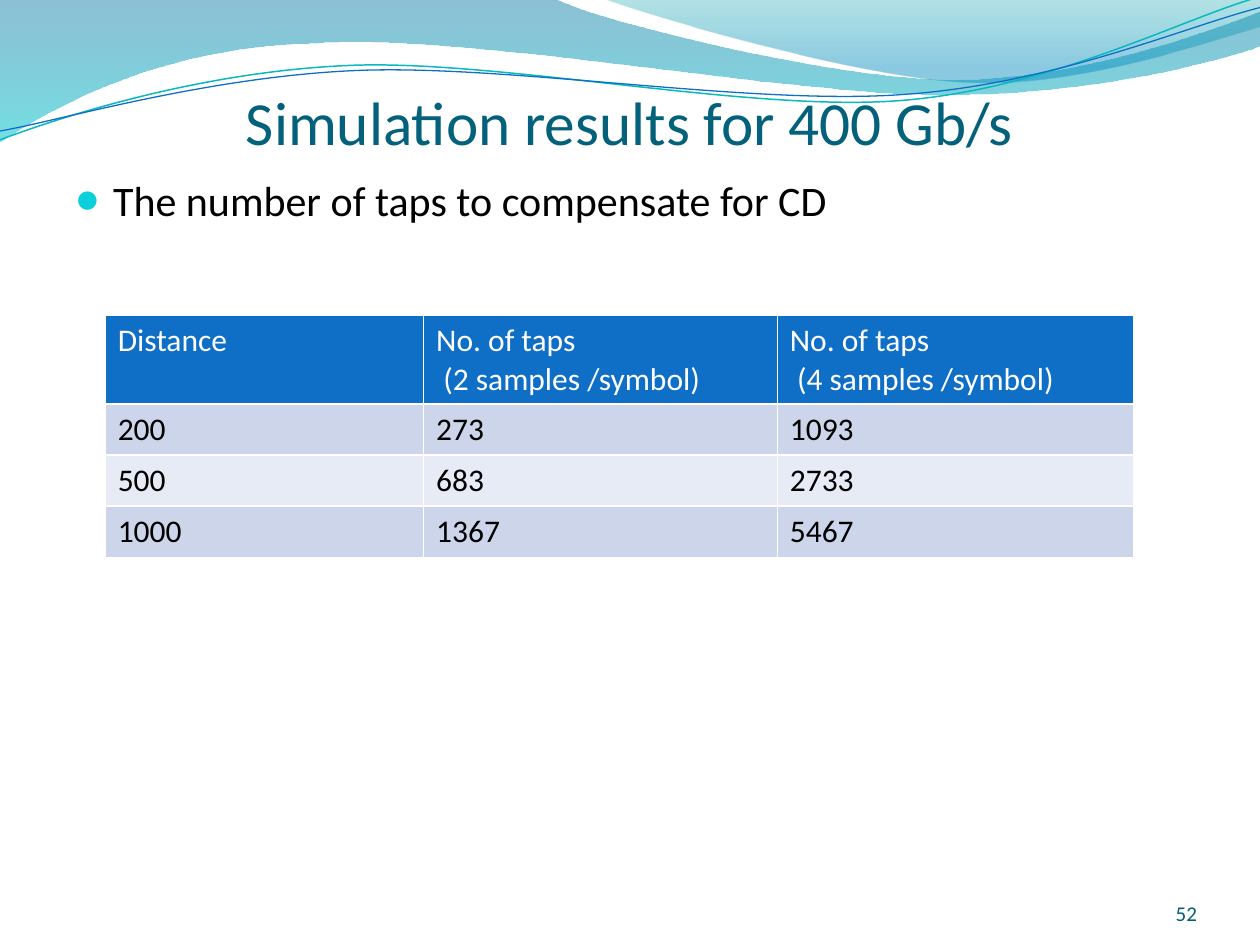
from lxml import etree
from pptx import Presentation
from pptx.dml.color import RGBColor
from pptx.enum.text import MSO_ANCHOR, PP_ALIGN
from pptx.oxml.ns import qn
from pptx.util import Cm, Pt

LEFT, CENTER, RIGHT = PP_ALIGN.LEFT, PP_ALIGN.CENTER, PP_ALIGN.RIGHT
TOP, BOTTOM = MSO_ANCHOR.TOP, MSO_ANCHOR.BOTTOM

WHITE = RGBColor(0xFF, 0xFF, 0xFF)
BLACK = RGBColor(0x00, 0x00, 0x00)
TITLE = RGBColor(0x04, 0x61, 0x7B)
NUMBER = RGBColor(0x04, 0x5D, 0x75)
BULLET = RGBColor(0x0B, 0xD0, 0xD9)
BLUE = RGBColor(0x0F, 0x6F, 0xC6)
TEAL = RGBColor(0x0A, 0xB8, 0xBF)
BAND = RGBColor(0xCC, 0xD5, 0xEA)
PALE = RGBColor(0xE7, 0xEB, 0xF5)
DEEP = RGBColor(0x00, 0x74, 0xA1)
AQUA = RGBColor(0x00, 0xC6, 0xCF)
SEA = RGBColor(0x00, 0xA1, 0xA9)
SKY = RGBColor(0x00, 0x8B, 0xBF)

INCH = Cm(2.54)

WAVES = [
    ([(0, 0), (4.4, -0.01), (4.76, 0.17, 6.64, 0.63, 7.58, 0.63),
      (8.53, 0.63, 9.58, 0.26, 10, 0.09), (10.01, 0.36),
      (9.83, 0.44, 8.7, 0.76, 7.46, 0.75), (6.22, 0.75, 3.82, 0.28, 2.57, 0.34),
      (1.29, 0.36, 0.46, 0.83, -0.01, 1.13)],
     [(0, DEEP, 45), (1, AQUA, 55)]),
    ([(4.79, -0.01), (5.09, 0.11, 6.82, 0.62, 7.69, 0.65),
      (8.56, 0.69, 9.61, 0.32, 10, 0.21), (10, 0)],
     [(0, SEA, 30), (0.8, SKY, 45)]),
]
CURVES = [
    ([(0, 1.11), (0.48, 0.93, 1.58, 0.57, 2.77, 0.52),
      (3.95, 0.47, 5.93, 0.89, 7.13, 0.8), (8.33, 0.71, 9.38, 0.15, 9.98, -0.02)],
     TEAL, 0.85),
    ([(0, 1.04), (0.47, 0.96, 1.64, 0.61, 2.83, 0.56),
      (4.03, 0.51, 5.97, 0.84, 7.17, 0.75), (8.36, 0.67, 9.41, 0.21, 10, 0.06)],
     BLUE, 0.75),
]
ROWS = [
    ["Distance", "No. of taps\n (2 samples /symbol)", "No. of taps\n (4 samples /symbol)"],
    ["200", "273", "1093"],
    ["500", "683", "2733"],
    ["1000", "1367", "5467"],
]


def bend(shape, node, part):
    node.tag = qn("a:cubicBezTo")
    for child in list(node):
        node.remove(child)
    for x, y in zip(part[::2], part[1::2]):
        etree.SubElement(node, qn("a:pt"), x=str(round(x * INCH) - shape.left),
                         y=str(round(y * INCH) - shape.top))


def outline(slide, path, close):
    ends = [(part[-2] * INCH, part[-1] * INCH) for part in path]
    form = slide.shapes.build_freeform(*ends[0])
    form.add_line_segments(ends[1:], close=close)
    shape = form.convert_to_shape()
    shape.shadow.inherit = False
    nodes = list(shape._element.iter(qn("a:lnTo")))
    for node, part in zip(nodes, path[1:]):
        if len(part) == 6:
            swap = etree.SubElement(node.getparent(), qn("a:cubicBezTo"))
            node.getparent().replace(node, swap)
            bend(shape, swap, part)
    return shape


def add_wave(slide, path, stops):
    shape = outline(slide, path, True)
    shape.line.fill.background()
    fill = shape.fill
    fill.gradient()
    fill.gradient_angle = 270
    for stop, (pos, color, _) in zip(fill.gradient_stops, stops):
        stop.position = pos
        stop.color.rgb = color
    for node, (_, _, alpha) in zip(shape._element.iter(qn("a:srgbClr")), stops):
        etree.SubElement(node, qn("a:alpha"), val=str(alpha * 1000))


def add_curve(slide, path, color, width):
    shape = outline(slide, path, False)
    shape.fill.background()
    shape.line.color.rgb = color
    shape.line.width = Pt(width)


def write(frame, text, size=18, color=BLACK, align=LEFT):
    frame.word_wrap = True
    for i, words in enumerate(text.split("\n")):
        para = frame.add_paragraph() if i else frame.paragraphs[0]
        para.alignment = align
        run = para.add_run()
        run.text = words
        run.font.name = "Calibri"
        run.font.size = Pt(size)
        run.font.color.rgb = color


def add_text(slide, box, text, anchor=TOP, inset=(0.25, 0.13), **style):
    frame = slide.shapes.add_textbox(*map(Cm, box)).text_frame
    frame.margin_left = frame.margin_right = Cm(inset[0])
    frame.margin_top = frame.margin_bottom = Cm(inset[1])
    frame.vertical_anchor = anchor
    write(frame, text, **style)
    return frame


def add_bullet(para):
    props = para._p.get_or_add_pPr()
    props.set("marL", str(Cm(0.76)))
    props.set("indent", str(-Cm(0.76)))
    color = etree.SubElement(props, qn("a:buClr"))
    etree.SubElement(color, qn("a:srgbClr"), val=str(BULLET))
    etree.SubElement(props, qn("a:buSzPct"), val="95000")
    etree.SubElement(props, qn("a:buFont"), typeface="Calibri")
    etree.SubElement(props, qn("a:buChar"), char="●")


def add_border(cell):
    props = cell._tc.get_or_add_tcPr()
    for side in ("lnL", "lnR", "lnT", "lnB"):
        line = etree.SubElement(props, qn("a:" + side), w=str(Pt(1)))
        fill = etree.SubElement(line, qn("a:solidFill"))
        etree.SubElement(fill, qn("a:srgbClr"), val=str(WHITE))


def add_grid(slide, rows):
    widths, heights = (6.42, 7.13, 7.18), (1.78, 1.03, 1.03, 1.04)
    table = slide.shapes.add_table(
        len(rows), len(widths), Cm(2.12), Cm(6.36),
        Cm(sum(widths)), Cm(sum(heights))).table
    for col, width in zip(table.columns, widths):
        col.width = Cm(width)
    for r, (row, height) in enumerate(zip(rows, heights)):
        table.rows[r].height = Cm(height)
        fill = BLUE if r == 0 else BAND if r % 2 else PALE
        for c, text in enumerate(row):
            cell = table.cell(r, c)
            add_border(cell)
            cell.fill.solid()
            cell.fill.fore_color.rgb = fill
            write(cell.text_frame, text, color=BLACK if r else WHITE)


def main():
    deck = Presentation()
    deck.slide_width, deck.slide_height = Cm(25.4), Cm(19.05)
    slide = deck.slides.add_slide(deck.slide_layouts[6])
    for wave in WAVES:
        add_wave(slide, *wave)
    for curve in CURVES:
        add_curve(slide, *curve)
    add_text(slide, (1.27, 0, 22.86, 3.18), "Simulation results for 400 Gb/s",
             anchor=BOTTOM, inset=(0, 0), size=35, color=TITLE, align=CENTER)
    body = add_text(slide, (1.27, 3.38, 22.86, 12.19),
                    "The number of taps to compensate for CD", size=24)
    add_bullet(body.paragraphs[0])
    add_grid(slide, ROWS)
    add_text(slide, (22.02, 17.65, 2.11, 1.02), "52",
             anchor=BOTTOM, inset=(0, 0), size=12, color=NUMBER, align=RIGHT)
    deck.save("out.pptx")


if __name__ == "__main__":
    main()
